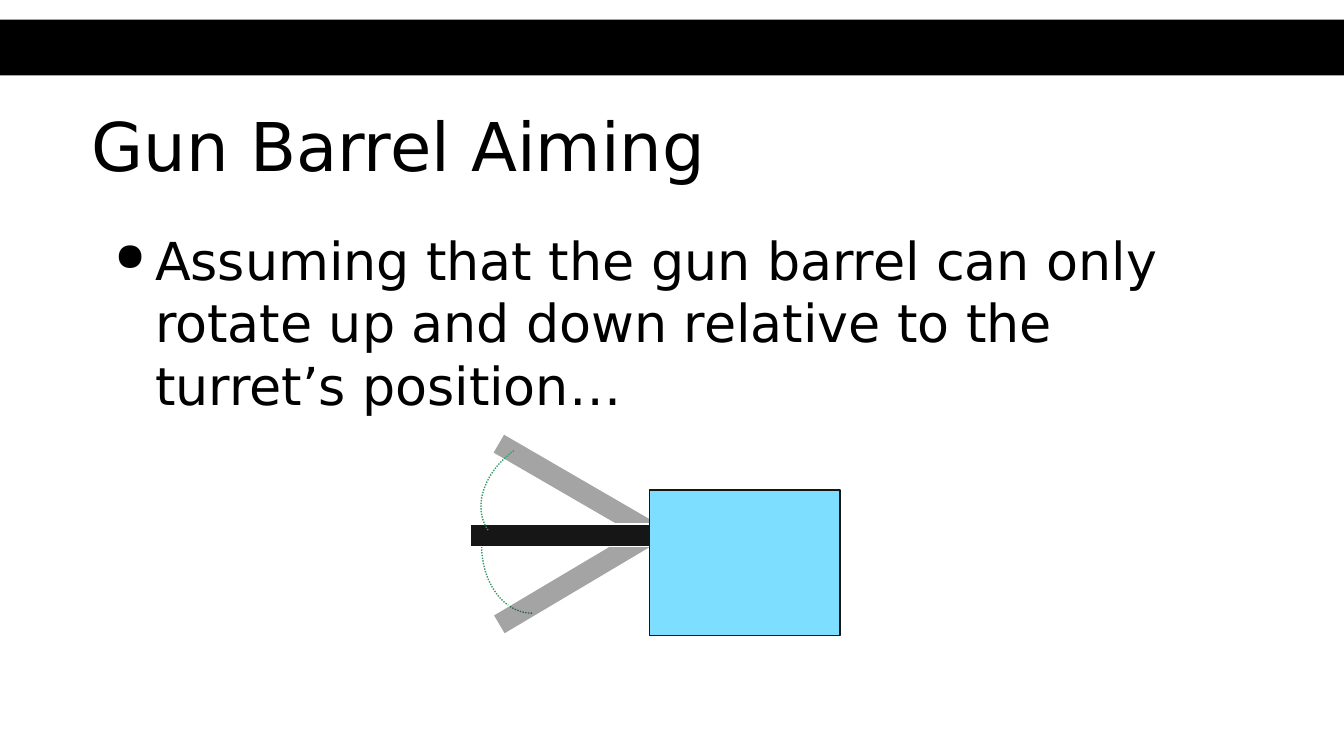
"""Build the Gun Barrel Aiming slide on a grid of 120 columns by 67.5 rows."""
from lxml.etree import SubElement
from pptx import Presentation
from pptx.dml.color import RGBColor
from pptx.enum.dml import MSO_LINE
from pptx.enum.shapes import MSO_SHAPE
from pptx.enum.text import MSO_ANCHOR, PP_ALIGN
from pptx.oxml.ns import qn
from pptx.util import Inches, Pt

prs = Presentation()
prs.slide_width, prs.slide_height = Inches(10), Inches(10 * 9 / 16)
COL, ROW = prs.slide_width / 120, prs.slide_height / 67.5
s = prs.slides.add_slide(prs.slide_layouts[1])


def color(fmt, value):
    """Give a fill or a line format one solid colour."""
    fmt.solid()
    fmt.fore_color.rgb = RGBColor.from_string(value)


def place(kind, x, y, w, h, line=None, fill=None, turn=0):
    """Add a preset shape at grid coordinates."""
    sp = s.shapes.add_shape(kind, int(x * COL), int(y * ROW), int(w * COL), int(h * ROW))
    sp.shadow.inherit = False
    sp.rotation = turn
    if fill:
        color(sp.fill, fill)
    else:
        sp.fill.background()
    if line:
        color(sp.line.fill, line)
        sp.line.width = Pt(0.75)
    else:
        sp.line.fill.background()
    return sp


texts = [
    (s.shapes.title, "Gun Barrel Aiming", 36, 8.75, 10.2),
    (s.placeholders[1], "Assuming that the gun barrel can only rotate up and down "
     "relative to the turret’s position…", 28, 19.75, 23),
]
for sp, text, size, top, height in texts:
    sp.left, sp.top = int(7 * COL), int(top * ROW)
    sp.width, sp.height = int(106 * COL), int(height * ROW)
    tf = sp.text_frame
    tf.word_wrap = True
    tf.vertical_anchor = MSO_ANCHOR.TOP
    tf.margin_left = tf.margin_right = Inches(0.1)
    tf.margin_top = Inches(0.05)
    p = tf.paragraphs[0]
    p.alignment = PP_ALIGN.LEFT
    p.space_before = Pt(0)
    r = p.add_run()
    r.text = text
    r.font.name, r.font.size = "DejaVu Sans", Pt(size)
    color(r.font.fill, "000000")

pPr = p._p.get_or_add_pPr()
pPr.set("marL", str(Inches(0.47)))
pPr.set("indent", str(Inches(-0.3)))
SubElement(SubElement(pPr, qn("a:buClr")), qn("a:srgbClr"), val="000000")
SubElement(pPr, qn("a:buSzPct"), val="75000")
SubElement(pPr, qn("a:buFont"), typeface="OpenSymbol")
SubElement(pPr, qn("a:buChar"), char="●")

place(MSO_SHAPE.RECTANGLE, 0, 1.75, 120, 5, fill="000000")
lower_arc = place(MSO_SHAPE.ARC, 43, 42.75, 9, 12, "339966", turn=180)
for x, y, turn in [(43.4, 42.6, 30.1), (43.4, 50.7, 329.3), (42, 46.8, 0)]:
    barrel = place(MSO_SHAPE.RECTANGLE, x, y, 16, 2, "FFFFFF", "161616", turn)
    if turn:
        clr = barrel._element.spPr.find(qn("a:solidFill")).find(qn("a:srgbClr"))
        SubElement(clr, qn("a:alpha"), val="39000")
place(MSO_SHAPE.RECTANGLE, 58, 43.75, 17, 13, "161616", "7DDEFF")
upper_arc = place(MSO_SHAPE.ARC, 44, 37.9, 9, 12, "339966", turn=235.1)
for arc in (lower_arc, upper_arc):
    arc.line.dash_style = MSO_LINE.ROUND_DOT

prs.save("out.pptx")
